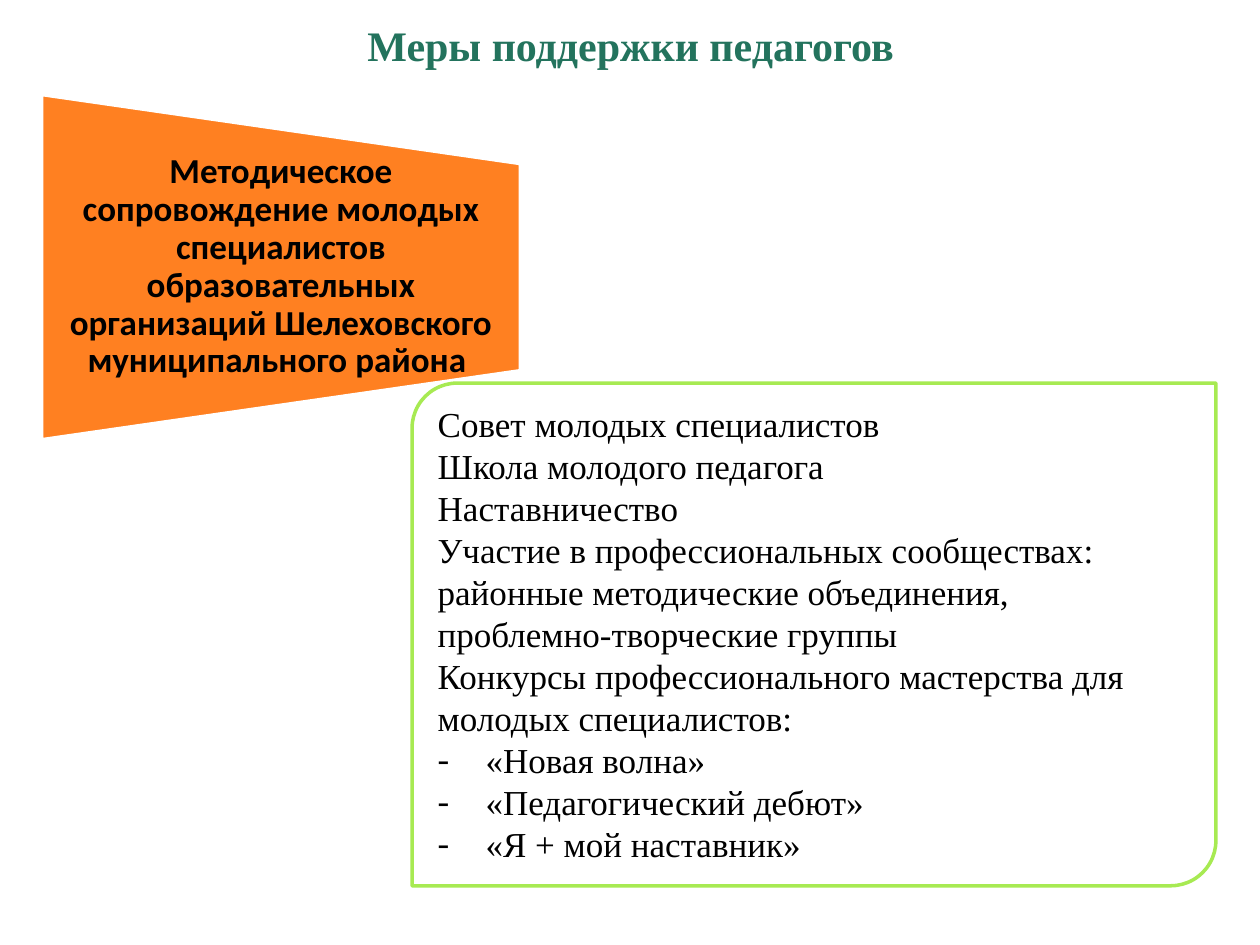
import pptx
import pptx.dml.color
import pptx.enum.shapes
import pptx.enum.text
import pptx.util
from pptx.util import Inches

SHAPE = pptx.enum.shapes.MSO_SHAPE
ALIGN = pptx.enum.text.PP_ALIGN
ANCHOR = pptx.enum.text.MSO_ANCHOR
SERIF = "Times New Roman"
MEASURES = [
    "Совет молодых специалистов",
    "Школа молодого педагога",
    "Наставничество",
    "Участие в профессиональных сообществах: районные методические объединения, "
    "проблемно-творческие группы",
    "Конкурсы профессионального мастерства для молодых специалистов:",
]
CONTESTS = ["«Новая волна»", "«Педагогический дебют»", "«Я + мой наставник»"]


def color(value):
    """Turn a hex string into a colour."""
    return pptx.dml.color.RGBColor.from_string(value)


def style_shape(shape, fill, line):
    """Give a shape a plain fill and a two-point outline."""
    shape.shadow.inherit = False
    shape.fill.solid()
    shape.fill.fore_color.rgb = color(fill)
    shape.line.color.rgb = color(line)
    shape.line.width = pptx.util.Pt(2)


def write(para, text, size, font, ink="000000", bold=False, align=ALIGN.LEFT):
    """Add one formatted run to a paragraph."""
    para.alignment = align
    span = para.add_run()
    span.text = text
    span.font.size = pptx.util.Pt(size)
    span.font.name = font
    span.font.bold = bold
    span.font.color.rgb = color(ink)


def add_dash(para):
    """Hang a paragraph behind a dash bullet."""
    properties = para._p.get_or_add_pPr()
    properties.set("marL", str(Inches(0.38)))
    properties.set("indent", str(-Inches(0.38)))
    for tag, name, value in (("a:buFont", "typeface", SERIF), ("a:buChar", "char", "-")):
        bullet = pptx.oxml.xmlchemy.OxmlElement(tag)
        bullet.set(name, value)
        properties.append(bullet)


def add_centered_text(page, left, top, width, height, margin):
    """Add a wrapping, vertically centred text box and return its paragraph."""
    box = page.shapes.add_textbox(left, top, width, height)
    frame = box.text_frame
    frame.word_wrap = True
    frame.vertical_anchor = ANCHOR.MIDDLE
    frame.margin_left = frame.margin_right = margin
    frame.margin_top = frame.margin_bottom = 0
    return frame.paragraphs[0]


def add_title(page, left, top, width, height):
    """Place the slide heading."""
    para = add_centered_text(page, left, top, width, height, Inches(0.1))
    write(para, "Меры поддержки педагогов", 24, SERIF, "23735D", True, ALIGN.CENTER)


def add_support_banner(page, left, top, width, height):
    """Place the orange banner, a sideways trapezoid with upright text."""
    offset = (width - height) // 2
    banner = page.shapes.add_shape(
        SHAPE.FLOWCHART_MANUAL_OPERATION, left + offset, top - offset, height, width
    )
    banner.rotation = 270
    style_shape(banner, "FF8021", "FFFFFF")
    inset = height // 5
    para = add_centered_text(
        page, left, top + inset, width, height - 2 * inset, Inches(0.14)
    )
    para.line_spacing = 0.9
    text = (
        "Методическое сопровождение молодых специалистов образовательных "
        "организаций Шелеховского муниципального района "
    )
    write(para, text, 20, "Calibri", bold=True, align=ALIGN.CENTER)


def add_measures_card(page, left, top, width, height):
    """Place the outlined card that lists measures and contests."""
    card = page.shapes.add_shape(
        SHAPE.ROUND_2_DIAG_RECTANGLE, left, top, width, height
    )
    card.adjustments[0] = 0.09
    card.adjustments[1] = 0
    style_shape(card, "FFFFFF", "A7EA52")
    frame = card.text_frame
    frame.word_wrap = True
    frame.vertical_anchor = ANCHOR.TOP
    for index, text in enumerate(MEASURES + CONTESTS):
        para = frame.add_paragraph() if index else frame.paragraphs[0]
        if text in CONTESTS:
            add_dash(para)
        write(para, text, 20, SERIF)


def main():
    """Build the slide and save the deck."""
    deck = pptx.Presentation()
    deck.slide_width, deck.slide_height = Inches(10), Inches(7.5)
    page = deck.slides.add_slide(deck.slide_layouts[6])
    add_title(page, Inches(0.16), Inches(0), Inches(9.69), Inches(0.71))
    add_support_banner(page, Inches(0.33), Inches(0.75), Inches(3.8), Inches(2.74))
    add_measures_card(page, Inches(3.27), Inches(3.04), Inches(6.38), Inches(3.99))
    deck.save("out.pptx")


if __name__ == "__main__":
    main()
